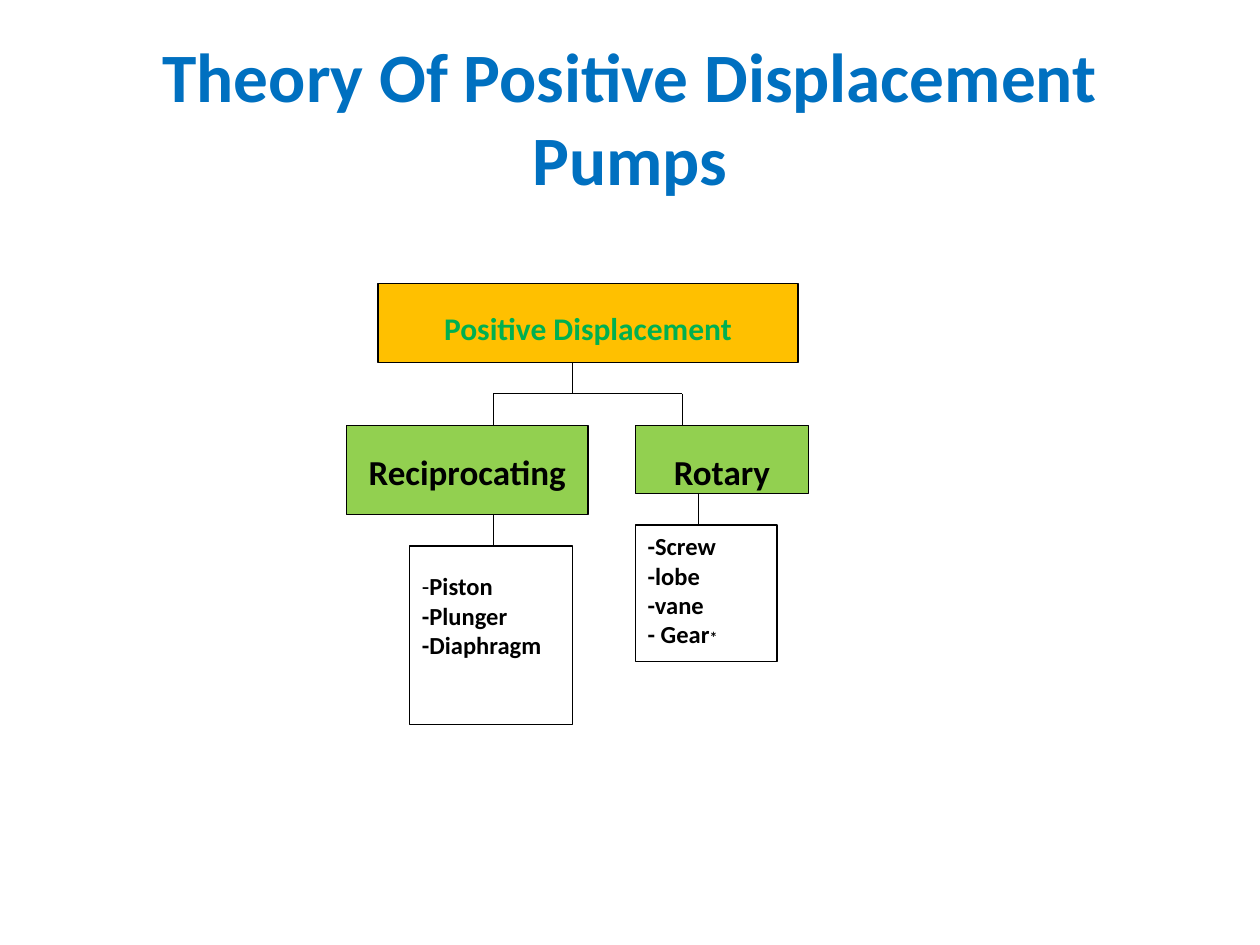
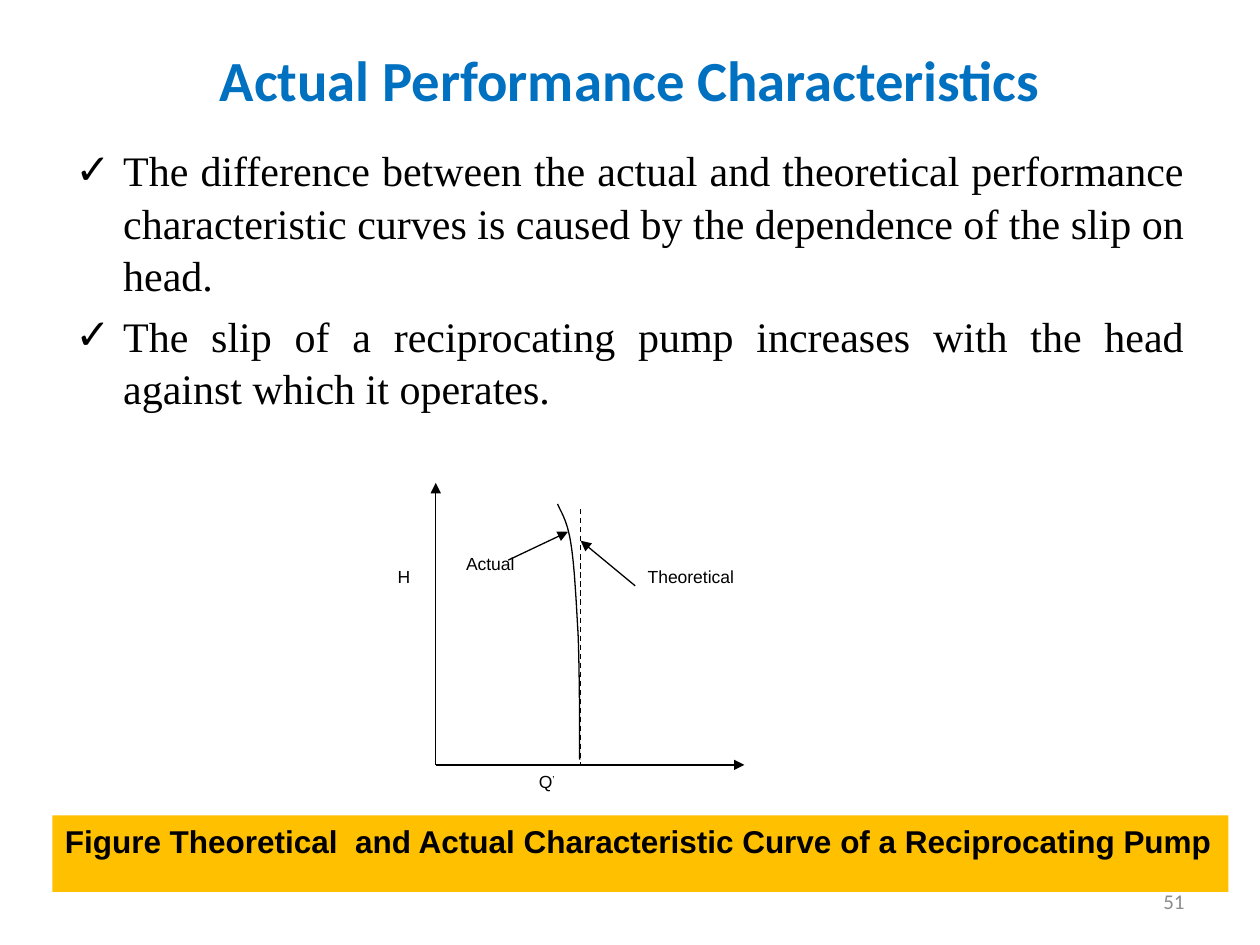
from lxml import etree
from pptx import Presentation
from pptx.dml.color import RGBColor
from pptx.enum.dml import MSO_LINE
from pptx.enum.shapes import MSO_CONNECTOR, MSO_SHAPE
from pptx.enum.text import MSO_ANCHOR, PP_ALIGN
from pptx.oxml.ns import qn
from pptx.util import Inches, Pt

LEFT, CENTER, RIGHT, JUSTIFY = (PP_ALIGN.LEFT, PP_ALIGN.CENTER,
                                PP_ALIGN.RIGHT, PP_ALIGN.JUSTIFY)
TOP, MIDDLE = MSO_ANCHOR.TOP, MSO_ANCHOR.MIDDLE
RECT, STRAIGHT, DASH = MSO_SHAPE.RECTANGLE, MSO_CONNECTOR.STRAIGHT, MSO_LINE.DASH

BLACK, WHITE, BLUE = "000000", "FFFFFF", "0070C0"
AMBER, LIME, GREEN, GREY = "FFC000", "92D050", "00B050", "8C8C8C"
HEADING, BODY, LABEL = "Calibri", "Times New Roman", "Arial"
CELL = 1 / 24  # grid cell in inches: 240 columns by 180 rows
LINE_WIDTH = Pt(0.75)


def grid(*cells):
    return [Inches(c * CELL) for c in cells]


def color(hex_code):
    return RGBColor.from_string(hex_code)


def write(s, lines, size, font=HEADING, ink=BLACK, bold=False, align=LEFT, anchor=TOP):
    """Fill a shape with one paragraph per line, all in one style."""
    tf = s.text_frame
    tf.word_wrap = True
    tf.vertical_anchor = anchor
    tf.text = "\n".join(lines)
    for p in tf.paragraphs:
        p.alignment = align
        for r in p.runs:
            style(r, size, font, ink, bold)
    return tf


def style(r, size, font=HEADING, ink=BLACK, bold=False):
    r.font.size, r.font.name, r.font.bold = Pt(size), font, bold
    r.font.color.rgb = color(ink)


def add_run(p, text, *args, **kwargs):
    r = p.add_run()
    r.text = text
    style(r, *args, **kwargs)
    return r


def text_box(slide, cells, lines, size, **kwargs):
    s = slide.shapes.add_textbox(*grid(*cells))
    return write(s, lines, size, **kwargs)


def title(slide, text, size, rows):
    text_box(slide, (12, 7.2, 216, rows), [text], size,
             ink=BLUE, bold=True, align=CENTER, anchor=MIDDLE)


def box(slide, cells, fill, outlined=True):
    s = slide.shapes.add_shape(RECT, *grid(*cells))
    s.shadow.inherit = False
    s.fill.solid()
    s.fill.fore_color.rgb = color(fill)
    if outlined:
        outline(s)
    else:
        s.line.fill.background()
    return s


def node(slide, cells, fill, lines, size, ink=BLACK, align=CENTER, drop=0.2):
    """Bold box of the tree; drop is the top inset in inches."""
    s = box(slide, cells, fill)
    tf = write(s, lines, size, ink=ink, bold=True, align=align)
    tf.margin_top, tf.margin_bottom = Inches(drop), 0
    return tf


def outline(s):
    s.line.color.rgb = color(BLACK)
    s.line.width = LINE_WIDTH


def line(slide, x1, y1, x2, y2, arrow=False, dashed=False):
    s = slide.shapes.add_connector(STRAIGHT, *grid(x1, y1, x2, y2))
    outline(s)
    if dashed:
        s.line.dash_style = DASH
    if arrow:
        etree.SubElement(s.line._get_or_add_ln(), qn("a:tailEnd"), type="triangle")
    etree.SubElement(s._element.spPr, qn("a:effectLst"))


def bezier(p0, p1, p2, p3, steps=12):
    """Points of a cubic curve after its start."""
    for i in range(1, steps + 1):
        t = i / steps
        u = 1 - t
        yield tuple(u**3 * a + 3 * u * u * t * b + 3 * u * t * t * c + t**3 * d
                    for a, b, c, d in zip(p0, p1, p2, p3))


def curve(slide, start, segments):
    points = [start]
    for segment in segments:
        points += list(bezier(points[-1], *segment))
    points = [grid(*point) for point in points]
    builder = slide.shapes.build_freeform(*points[0])
    builder.add_line_segments(points[1:], close=False)
    s = builder.convert_to_shape()
    s.shadow.inherit = False
    s.fill.background()
    outline(s)


def check_bullet(p):
    pPr = p._p.get_or_add_pPr()
    pPr.set("marL", str(Inches(0.38)))
    pPr.set("indent", str(-Inches(0.38)))
    etree.SubElement(pPr, qn("a:buFont"), typeface=LABEL)
    etree.SubElement(pPr, qn("a:buChar"), char="✓")


def pump_tree(slide):
    title(slide, "Theory Of Positive Displacement Pumps", 39.6, 30)

    # Families and their pump types
    node(slide, (72, 54, 80, 15), AMBER, ["Positive Displacement"], 18, ink=GREEN)
    node(slide, (66, 81, 46, 17), LIME, ["Reciprocating"], 20)
    node(slide, (121, 81, 33, 13), LIME, ["Rotary"], 20)
    rotary = node(slide, (121, 100, 27, 26), WHITE,
                  ["-Screw", "-lobe", "-vane", "- Gear"], 14, align=LEFT, drop=0.05)
    add_run(rotary.paragraphs[-1], "*", 9, bold=True)
    reciprocating = node(slide, (78, 104, 31, 34), WHITE,
                         ["-", "-Plunger", "-Diaphragm"], 14, align=LEFT)
    dash = reciprocating.paragraphs[0]
    dash.runs[0].font.bold = False
    add_run(dash, "Piston", 14, bold=True)

    # Branches
    left, right, fork = 94, 130, 75
    line(slide, 109, 69, 109, fork)
    line(slide, left, fork, right, fork)
    for x in (left, right):
        line(slide, x, fork, x, 81)
    line(slide, left, 98, left, 104)
    line(slide, 133, 94, 133, 100)


def performance(slide):
    title(slide, "Actual Performance Characteristics", 32.4, 15.6)

    # Findings
    findings = text_box(slide, (12, 26, 216, 118.8), [
        "The difference between the actual and theoretical performance "
        "characteristic curves is caused by the dependence of the slip on head.",
        "The slip of a reciprocating pump increases with the head against "
        "which it operates."], 24, font=BODY, align=JUSTIFY)
    for p in findings.paragraphs:
        p.space_before = Pt(4.8)
        p.line_spacing = 1.04
        check_bullet(p)

    # Axes and curves
    origin_x, origin_y, limit_x = 83, 145.7, 110.6
    line(slide, origin_x, origin_y, origin_x, 92, arrow=True)
    line(slide, origin_x, origin_y, 141.8, origin_y, arrow=True)
    line(slide, limit_x, 97, limit_x, origin_y, dashed=True)
    curve(slide, (110.4, 144.7), [
        ((110.4, 140.6), (110.4, 127.7), (110.1, 120.7)),
        ((109.7, 113.8), (109.4, 107.5), (108.7, 103.3)),
        ((108, 99), (106.8, 97.5), (106.2, 96))])

    # Labels and pointers
    for x, y, text in ((73.4, 106.6, "H"), (86.4, 104.2, "Actual"),
                       (121, 106.6, "Theoretical")):
        text_box(slide, (x, y, 24.2, 14.6), [text], 10, font=LABEL)
    flow = text_box(slide, (100.3, 145.7, 14, 14.6), ["Q"], 10, font=LABEL)
    prime = add_run(flow.paragraphs[0], "’", 10, font=LABEL)
    prime.font._element.set("baseline", "30000")
    line(slide, 96.8, 106.7, 108.2, 101.3, arrow=True)
    line(slide, 121, 111.6, limit_x, 103, arrow=True)

    # Caption and page number
    caption = box(slide, (10, 155.3, 224, 14.6), AMBER, outlined=False)
    write(caption, ["Figure Theoretical  and Actual Characteristic Curve "
                    "of a Reciprocating Pump"], 18, font=LABEL, bold=True)
    text_box(slide, (172, 166.8, 56, 9.6), ["51"], 12, ink=GREY,
             align=RIGHT, anchor=MIDDLE)


def main():
    prs = Presentation()
    prs.slide_width, prs.slide_height = grid(240, 180)
    for build in (pump_tree, performance):
        build(prs.slides.add_slide(prs.slide_layouts[6]))
    prs.save("out.pptx")


if __name__ == "__main__":
    main()
